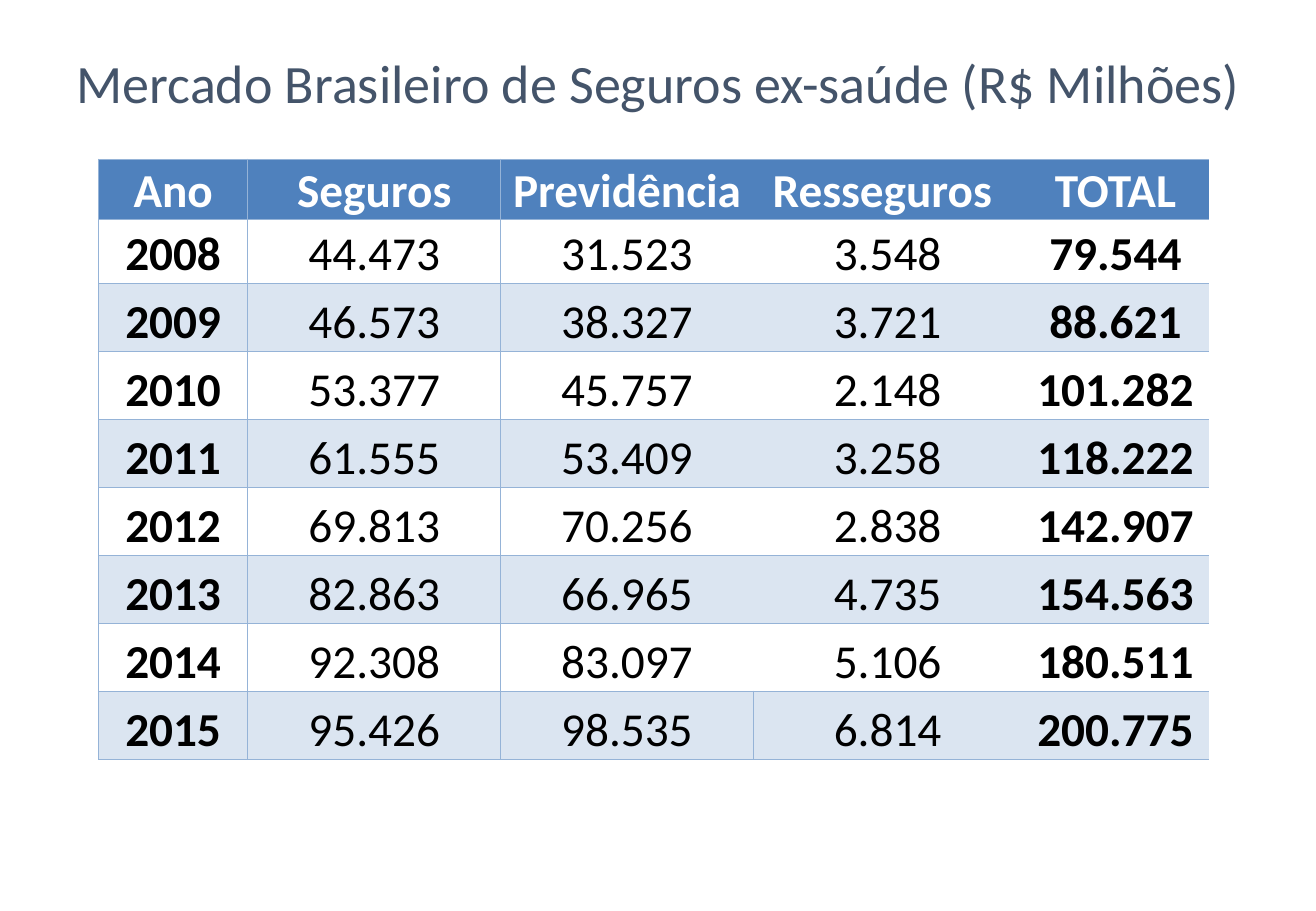
from pptx import Presentation
from pptx.dml.color import RGBColor as RGB
from pptx.enum.text import MSO_ANCHOR as ANCHOR, PP_ALIGN as ALIGN
from pptx.oxml.ns import qn
from pptx.util import Inches, Pt
from lxml.etree import SubElement

COLORS = {"title": "44546A", "header": "4F81BD", "band": "DBE5F1",
          "line": "95B3D7", "white": "FFFFFF", "text": "000000"}
FONT = "Calibri"
NO_STYLE = "{2D5ABB26-0587-4C30-8999-92F81FD0307C}"
DATA = [
    ["Ano", "Seguros", "Previdência", "Resseguros ", "TOTAL"],
    ["2008", "44.473", "31.523", "3.548", "79.544"],
    ["2009", "46.573", "38.327", "3.721", "88.621"],
    ["2010", "53.377", "45.757", "2.148", "101.282"],
    ["2011", "61.555", "53.409", "3.258", "118.222"],
    ["2012", "69.813", "70.256", "2.838", "142.907"],
    ["2013", "82.863", "66.965", "4.735", "154.563"],
    ["2014", "92.308", "83.097", "5.106", "180.511"],
    ["2015", "95.426", "98.535", "6.814", "200.775"],
]
COLS = [1.23, 2.08, 2.08, 2.21, 1.54]
ROWS = [0.5, 0.52] + [0.56] * 7


def add_text(p, text, size, color, bold=False):
    p.alignment = ALIGN.CENTER
    r = p.add_run()
    r.text = text
    r.font.name = FONT
    r.font.size = Pt(size)
    r.font.bold = bold
    r.font.color.rgb = RGB.from_string(COLORS[color])


def add_border(cell, side):
    ln = SubElement(cell._tc.get_or_add_tcPr(), qn(f"a:ln{side}"), w=str(Pt(0.5)))
    fill = SubElement(ln, qn("a:solidFill"))
    SubElement(fill, qn("a:srgbClr"), val=COLORS["line"])


prs = Presentation()
prs.slide_width, prs.slide_height = Inches(10.83), Inches(7.5)
s = prs.slides.add_slide(prs.slide_layouts[6])

# Title
tf = s.shapes.add_textbox(Inches(0.21), Inches(0.36), Inches(10.62), Inches(0.95)).text_frame
tf.word_wrap = True
tf.margin_right = Inches(0.3)
add_text(tf.paragraphs[0], "Mercado Brasileiro de Seguros ex-saúde (R$ Milhões)", 32, "title")

# Table grid
table = s.shapes.add_table(len(ROWS), len(COLS), Inches(0.81), Inches(1.31),
                           Inches(sum(COLS)), Inches(sum(ROWS))).table
table.first_row = True
table.horz_banding = False
table._tbl.tblPr.find(qn("a:tableStyleId")).text = NO_STYLE
for col, width in zip(table.columns, COLS):
    col.width = Inches(width)
for row, height in zip(table.rows, ROWS):
    row.height = Inches(height)

# Cells: bold first and last columns, every second year banded
last_row, last_col = len(ROWS) - 1, len(COLS) - 1
for i, values in enumerate(DATA):
    ruled = {0, 1, 2} if i == last_row else {0, 1}  # columns with a line on their left
    for j, value in enumerate(values):
        cell = table.cell(i, j)
        cell.vertical_anchor = ANCHOR.BOTTOM
        cell.margin_left = cell.margin_right = cell.margin_top = Inches(0.01)
        cell.margin_bottom = 0
        sides = ("L" if j in ruled else "") + ("R" if j + 1 in ruled else "") + "TB"
        for side in sides:
            add_border(cell, side)
        if i and i % 2:
            cell.fill.background()
        else:
            cell.fill.solid()
            cell.fill.fore_color.rgb = RGB.from_string(COLORS["band" if i else "header"])
        add_text(cell.text_frame.paragraphs[0], value, 28,
                 "text" if i else "white", i == 0 or j in (0, last_col))

prs.save("out.pptx")
